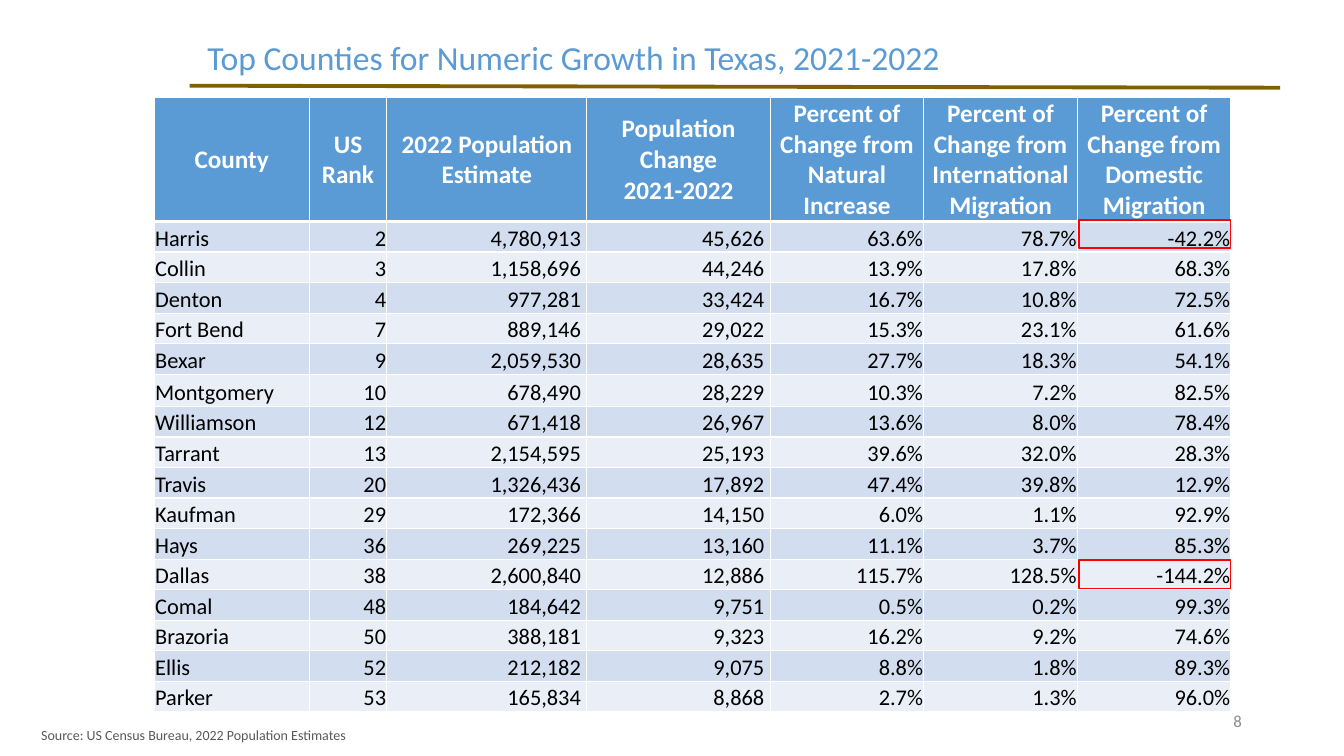
import pptx
import pptx.util
import pptx.dml.color
import pptx.enum.shapes
import pptx.enum.text
import pptx.oxml
import pptx.oxml.ns
from lxml import etree

Cm = pptx.util.Cm
Pt = pptx.util.Pt
ALIGN = pptx.enum.text.PP_ALIGN
ANCHOR = pptx.enum.text.MSO_ANCHOR
HUES = {
    "blue": "5B9BD5", "dark": "D2DEEF", "pale": "EAEFF7", "white": "FFFFFF",
    "black": "000000", "grey": "595959", "mute": "8C8C8C", "gold": "806000",
    "red": "FF0000",
}
HEADS = [
    "County", "US Rank", "2022 Population Estimate",
    "Population Change\n2021-2022",
    "Percent of Change from Natural Increase",
    "Percent of Change from\nInternational Migration",
    "Percent of Change from Domestic Migration",
]
ROWS = [
    ("Harris", "2", "4,780,913", "45,626", "63.6%", "78.7%", "-42.2%"),
    ("Collin", "3", "1,158,696", "44,246", "13.9%", "17.8%", "68.3%"),
    ("Denton", "4", "977,281", "33,424", "16.7%", "10.8%", "72.5%"),
    ("Fort Bend", "7", "889,146", "29,022", "15.3%", "23.1%", "61.6%"),
    ("Bexar", "9", "2,059,530", "28,635", "27.7%", "18.3%", "54.1%"),
    ("Montgomery", "10", "678,490", "28,229", "10.3%", "7.2%", "82.5%"),
    ("Williamson", "12", "671,418", "26,967", "13.6%", "8.0%", "78.4%"),
    ("Tarrant", "13", "2,154,595", "25,193", "39.6%", "32.0%", "28.3%"),
    ("Travis", "20", "1,326,436", "17,892", "47.4%", "39.8%", "12.9%"),
    ("Kaufman", "29", "172,366", "14,150", "6.0%", "1.1%", "92.9%"),
    ("Hays", "36", "269,225", "13,160", "11.1%", "3.7%", "85.3%"),
    ("Dallas", "38", "2,600,840", "12,886", "115.7%", "128.5%", "-144.2%"),
    ("Comal", "48", "184,642", "9,751", "0.5%", "0.2%", "99.3%"),
    ("Brazoria", "50", "388,181", "9,323", "16.2%", "9.2%", "74.6%"),
    ("Ellis", "52", "212,182", "9,075", "8.8%", "1.8%", "89.3%"),
    ("Parker", "53", "165,834", "8,868", "2.7%", "1.3%", "96.0%"),
]
WIDTHS = [3.9, 1.96, 5.04, 4.62, 3.87, 3.87, 3.87]


def apply(item, form):
    for name, value in form.items():
        setattr(item, name, value)


def tint(name):
    return pptx.dml.color.RGBColor.from_string(HUES[name])


class Deck:
    font = "Calibri"

    def __init__(self, slide):
        self.slide = slide

    def style(self, frame, size, hue, form, bold=False):
        for para in frame.paragraphs:
            apply(para, form)
            apply(para.font, {"name": self.font, "size": Pt(size), "bold": bold})
            para.font.color.rgb = tint(hue)

    def text(self, box, words, size, hue, form, anchor=ANCHOR.TOP):
        frame = self.slide.shapes.add_textbox(*map(Cm, box)).text_frame
        apply(frame, {"word_wrap": True, "vertical_anchor": anchor, "text": words})
        self.style(frame, size, hue, form)

    def line(self, ends, hue, width):
        kind = pptx.enum.shapes.MSO_CONNECTOR.STRAIGHT
        rule = self.slide.shapes.add_connector(kind, *map(Cm, ends))
        rule.line.color.rgb = tint(hue)
        rule.line.width = Pt(width)
        etree.SubElement(rule._element.spPr, pptx.oxml.ns.qn("a:effectLst"))

    def frame(self, box, hue, width):
        kind = pptx.enum.shapes.MSO_SHAPE.RECTANGLE
        shape = self.slide.shapes.add_shape(kind, *map(Cm, box))
        shape.shadow.inherit = False
        shape.fill.background()
        shape.line.color.rgb = tint(hue)
        shape.line.width = Pt(width)

    def edge(self, cell, side, width):
        space = pptx.oxml.ns.nsdecls("a")
        return cell._tc.get_or_add_tcPr().append(pptx.oxml.parse_xml(
            f'<a:{side} {space} w="{Pt(width)}"><a:solidFill>'
            f'<a:srgbClr val="{HUES["white"]}"/></a:solidFill></a:{side}>'))

    def cell(self, cell, words, row, col):
        head = row == 0
        pad = 0.15 if not head and col in (2, 3) else 0.02
        apply(cell, {
            "text": words, "margin_left": Cm(0.02), "margin_right": Cm(pad),
            "margin_top": Cm(0.02), "margin_bottom": 0,
            "vertical_anchor": ANCHOR.MIDDLE if head else ANCHOR.BOTTOM,
        })
        for side in ("lnL", "lnR", "lnT", "lnB"):
            thick = (head and side == "lnB") or (row == 1 and side == "lnT")
            self.edge(cell, side, 3 if thick else 1)
        cell.fill.solid()
        cell.fill.fore_color.rgb = tint(
            "blue" if head else "dark" if row % 2 else "pale")
        side = ALIGN.CENTER if head else ALIGN.RIGHT if col else ALIGN.LEFT
        self.style(cell.text_frame, 18 if head else 16,
                   "white" if head else "black", {"alignment": side}, head)

    def table(self, left, top, widths, heights, rows):
        box = left, top, sum(widths), sum(heights)
        grid = self.slide.shapes.add_table(
            len(rows), len(widths), *map(Cm, box)).table
        for col, width in zip(grid.columns, widths):
            col.width = Cm(width)
        for row, height in zip(grid.rows, heights):
            row.height = Cm(height)
        for r, row in enumerate(rows):
            for c, words in enumerate(row):
                self.cell(grid.cell(r, c), words, r, c)


def main():
    show = pptx.Presentation()
    apply(show, {"slide_width": Cm(33.87), "slide_height": Cm(19.05)})
    deck = Deck(show.slides.add_slide(show.slide_layouts[6]))
    deck.line((4.78, 2.16, 32.26, 2.21), "gold", 2.75)
    heights = [3.1] + [0.81 if row[0] == "Montgomery" else 0.77 for row in ROWS]
    deck.table(3.89, 2.46, WIDTHS, heights, [HEADS] + ROWS)
    deck.text((4.7, 0.81, 19.51, 1.27),
              "Top Counties for Numeric Growth in Texas, 2021-2022",
              24, "blue", {"alignment": ALIGN.CENTER})
    deck.text((0.79, 18.16, 12.7, 0.71),
              "Source: US Census Bureau, 2022 Population Estimates",
              10, "grey", {"line_spacing": 1.07})
    deck.text((23.93, 17.65, 7.62, 1.02), "8", 12, "mute",
              {"alignment": ALIGN.RIGHT}, ANCHOR.MIDDLE)
    for top in (5.54, 14.12):
        deck.frame((27.2, top, 3.81, 0.71), "red", 1.25)
    show.save("out.pptx")


if __name__ == "__main__":
    main()
